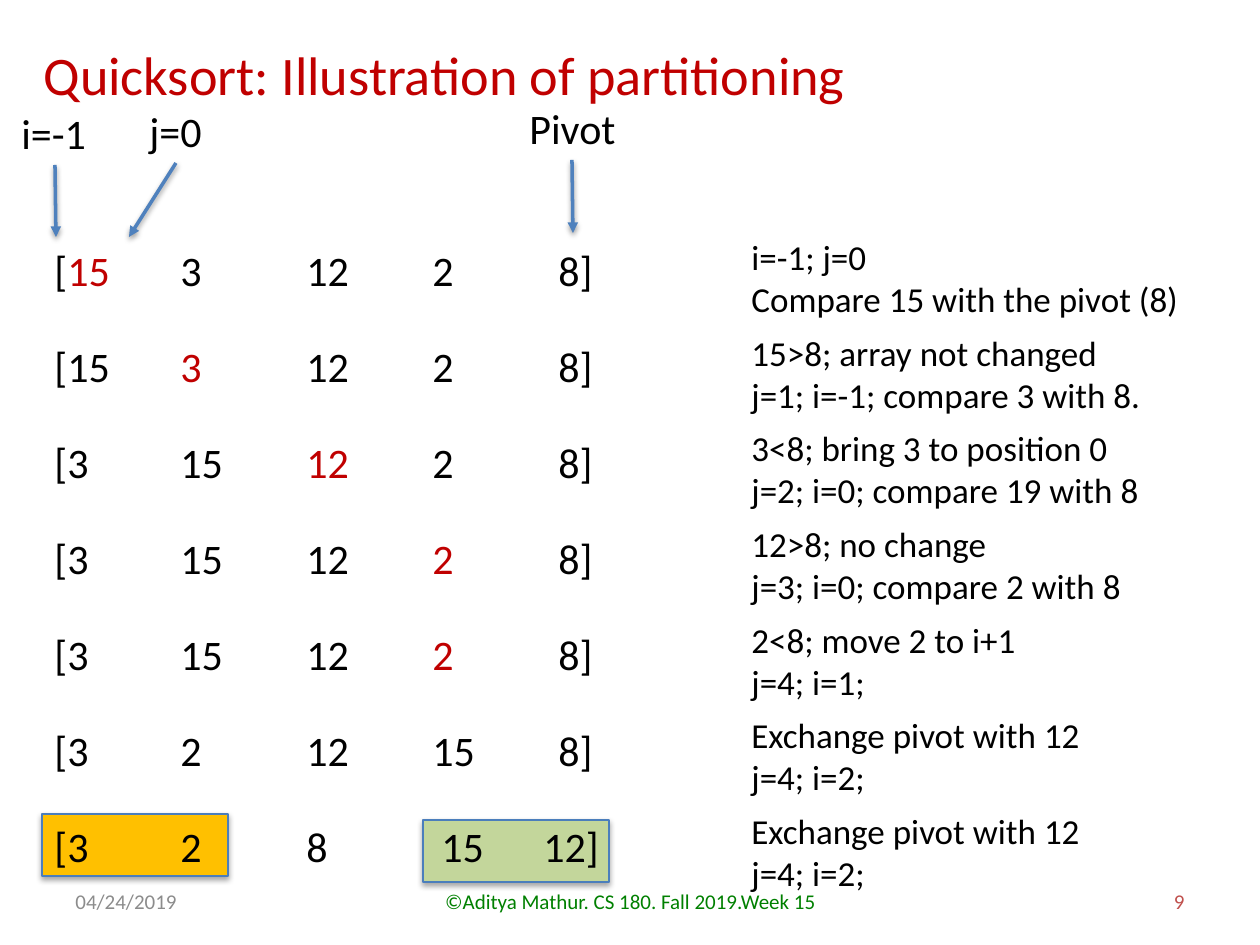
from lxml import etree
from pptx import Presentation
from pptx.dml.color import RGBColor
from pptx.enum.shapes import MSO_CONNECTOR, MSO_SHAPE
from pptx.enum.text import MSO_ANCHOR, PP_ALIGN
from pptx.oxml.ns import qn
from pptx.util import Pt

PX = 914400 / 126
FONT = "Calibri"
BLACK = RGBColor(0x00, 0x00, 0x00)
RED = RGBColor(0xC0, 0x00, 0x00)
GREY = RGBColor(0x8C, 0x8C, 0x8C)
GREEN = RGBColor(0x00, 0x80, 0x00)
BRICK = RGBColor(0xC0, 0x50, 0x4D)
BLUE = RGBColor(0x4F, 0x81, 0xBD)
OUTLINE = RGBColor(0x4B, 0x7E, 0xBC)
ORANGE = RGBColor(0xFF, 0xC0, 0x00)
SAGE = RGBColor(0xC3, 0xD6, 0x9B)
LEFT, CENTER, RIGHT = PP_ALIGN.LEFT, PP_ALIGN.CENTER, PP_ALIGN.RIGHT
TOP, MIDDLE = MSO_ANCHOR.TOP, MSO_ANCHOR.MIDDLE
RECTANGLE, STRAIGHT = MSO_SHAPE.RECTANGLE, MSO_CONNECTOR.STRAIGHT

COLUMN_STOPS = (126, 252, 378, 504)
FINAL_STOPS = (126, 252, 387, 489)
ROW_TOP, ROW_PITCH = 238, 96
NOTE_TOP, NOTE_PITCH = 229, 95.67
STEPS = [
    ("[15 3 12 2 8]", 0, ("i=-1; j=0", "Compare 15 with the pivot (8)")),
    ("[15 3 12 2 8]", 1, ("15>8; array not changed", "j=1; i=-1; compare 3 with 8.")),
    ("[3 15 12 2 8]", 2, ("3<8; bring 3 to position 0", "j=2; i=0; compare 19 with 8")),
    ("[3 15 12 2 8]", 3, ("12>8; no change", "j=3; i=0; compare 2 with 8")),
    ("[3 15 12 2 8]", 3, ("2<8; move 2 to i+1", "j=4; i=1;")),
    ("[3 2 12 15 8]", None, ("Exchange pivot with 12", "j=4; i=2;")),
    ("[3 2 8 15 12]", None, ("Exchange pivot with 12", "j=4; i=2;")),
]
POINTERS = [
    ("Pivot", (517, 96, 112, 63), (572, 160, 573, 233)),
    ("i=-1", (9, 101, 91, 63), (55, 165, 56, 237)),
    ("j=0", (137, 99, 78, 63), (176, 163, 129, 237)),
]
FOOTERS = [
    ("04/24/2019", (63, 876, 294, 50), GREY, LEFT),
    ("©Aditya Mathur. CS 180. Fall 2019.Week 15", (431, 876, 399, 50), GREEN, CENTER),
    ("9", (903, 876, 294, 50), BRICK, RIGHT),
]


def emu(*lengths):
    return [round(length * PX) for length in lengths]


def write(frame, paragraphs, size=24, color=BLACK, align=LEFT, anchor=TOP, wrap=True, stops=()):
    """Fill a text frame with paragraphs, each a list of (text, color or None) runs."""
    frame.word_wrap = wrap
    frame.vertical_anchor = anchor
    for index, runs in enumerate(paragraphs):
        paragraph = frame.add_paragraph() if index else frame.paragraphs[0]
        paragraph.alignment = align
        if stops:
            tabs = etree.SubElement(paragraph._p.get_or_add_pPr(), qn("a:tabLst"))
            for position in emu(*stops):
                etree.SubElement(tabs, qn("a:tab"), pos=str(position), algn="l")
        for text, run_color in runs:
            run = paragraph.add_run()
            run.text = text
            run.font.name = FONT
            run.font.size = Pt(size)
            run.font.color.rgb = run_color or color


def add_shadow(shape, distance, opacity):
    properties = shape._element.spPr
    for effects in properties.findall(qn("a:effectLst")):
        properties.remove(effects)
    effects = etree.SubElement(properties, qn("a:effectLst"))
    shadow = etree.SubElement(effects, qn("a:outerShdw"), blurRad="40000", dist=str(distance),
                              dir="5400000", rotWithShape="0")
    color = etree.SubElement(shadow, qn("a:srgbClr"), val="000000")
    etree.SubElement(color, qn("a:alpha"), val=str(opacity * 1000))


class SlideBuilder:
    """Adds styled elements to one slide."""

    def __init__(self, slide):
        self.slide = slide

    def title(self, text, box, **style):
        shape = self.slide.shapes.title
        shape.left, shape.top, shape.width, shape.height = emu(*box)
        write(shape.text_frame, [[(text, None)]], **style)

    def text(self, paragraphs, box, **style):
        shape = self.slide.shapes.add_textbox(*emu(*box))
        write(shape.text_frame, paragraphs, **style)

    def highlight(self, box, fill):
        shape = self.slide.shapes.add_shape(RECTANGLE, *emu(*box))
        shape.fill.solid()
        shape.fill.fore_color.rgb = fill
        shape.line.color.rgb = OUTLINE
        shape.line.width = Pt(0.75)
        add_shadow(shape, 23000, 35)

    def arrow(self, ends):
        connector = self.slide.shapes.add_connector(STRAIGHT, *emu(*ends))
        connector.line.color.rgb = BLUE
        connector.line.width = Pt(2)
        etree.SubElement(connector.line._get_or_add_ln(), qn("a:tailEnd"), type="triangle")
        add_shadow(connector, 20000, 38)

    def array(self, values, marked, top, stops):
        runs = []
        for index, value in enumerate(values.split()):
            if index:
                runs.append(("\t", None))
            if value.startswith("["):
                runs.append(("[", None))
            runs.append((value.lstrip("["), RED if index == marked else None))
        self.text([runs], (42, top, 575, 63), stops=stops)


def main():
    presentation = Presentation()
    presentation.slide_width, presentation.slide_height = emu(1260, 945)
    builder = SlideBuilder(presentation.slides.add_slide(presentation.slide_layouts[5]))
    builder.title("Quicksort: Illustration of partitioning", (31, 35, 868, 78), size=31, color=RED)
    builder.highlight((423, 820, 186, 62), SAGE)
    builder.highlight((42, 814, 186, 62), ORANGE)
    for index, (values, marked, note) in enumerate(STEPS):
        stops = FINAL_STOPS if index == len(STEPS) - 1 else COLUMN_STOPS
        builder.array(values, marked, ROW_TOP + index * ROW_PITCH, stops)
        note_top = round(NOTE_TOP + index * NOTE_PITCH)
        builder.text([[(line, None)] for line in note], (739, note_top, 460, 97), size=20)
    for label, box, ends in POINTERS:
        builder.text([[(label, None)]], box, wrap=False)
        builder.arrow(ends)
    for text, box, color, align in FOOTERS:
        builder.text([[(text, None)]], box, size=12, color=color, align=align, anchor=MIDDLE)
    presentation.save("out.pptx")


if __name__ == "__main__":
    main()
